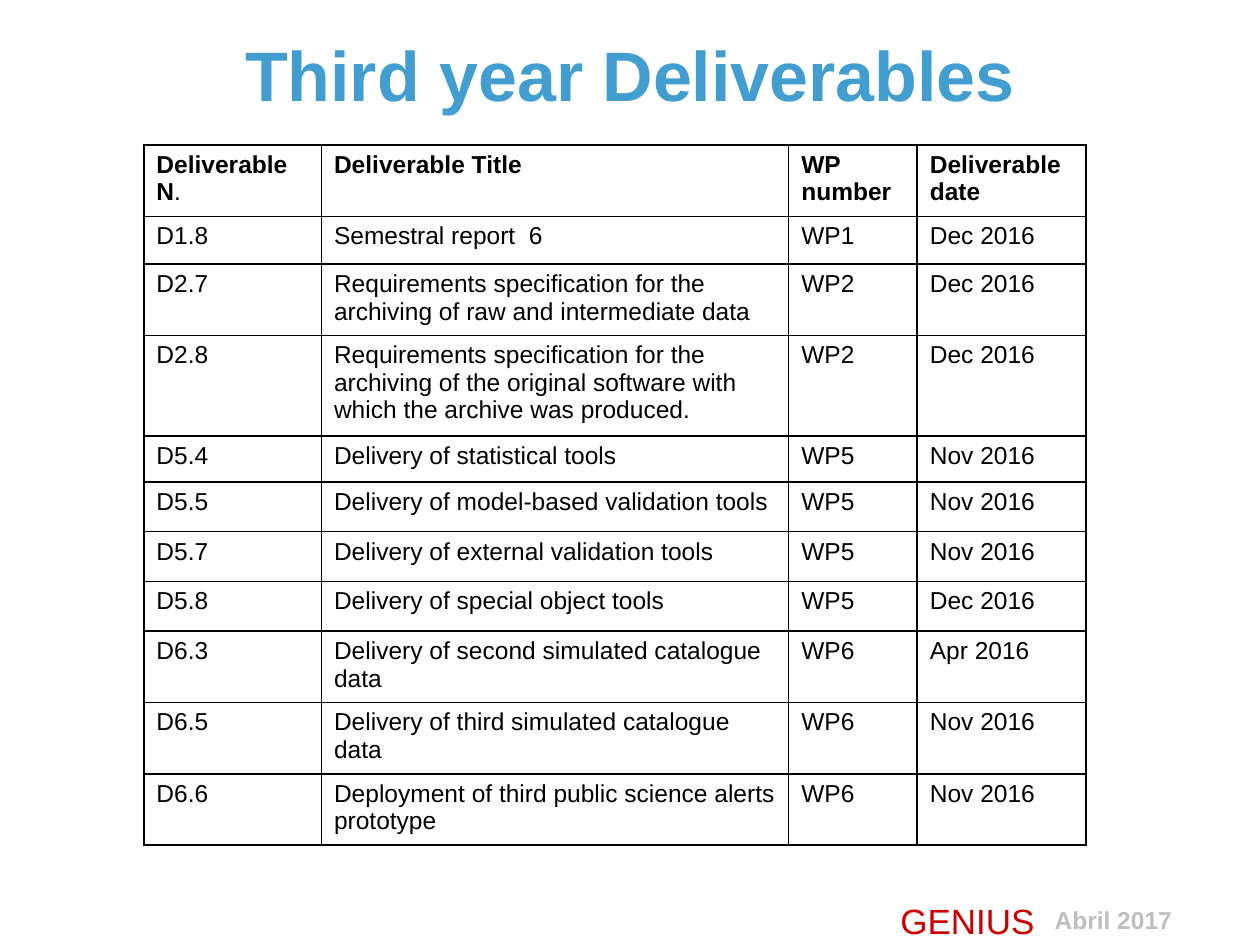
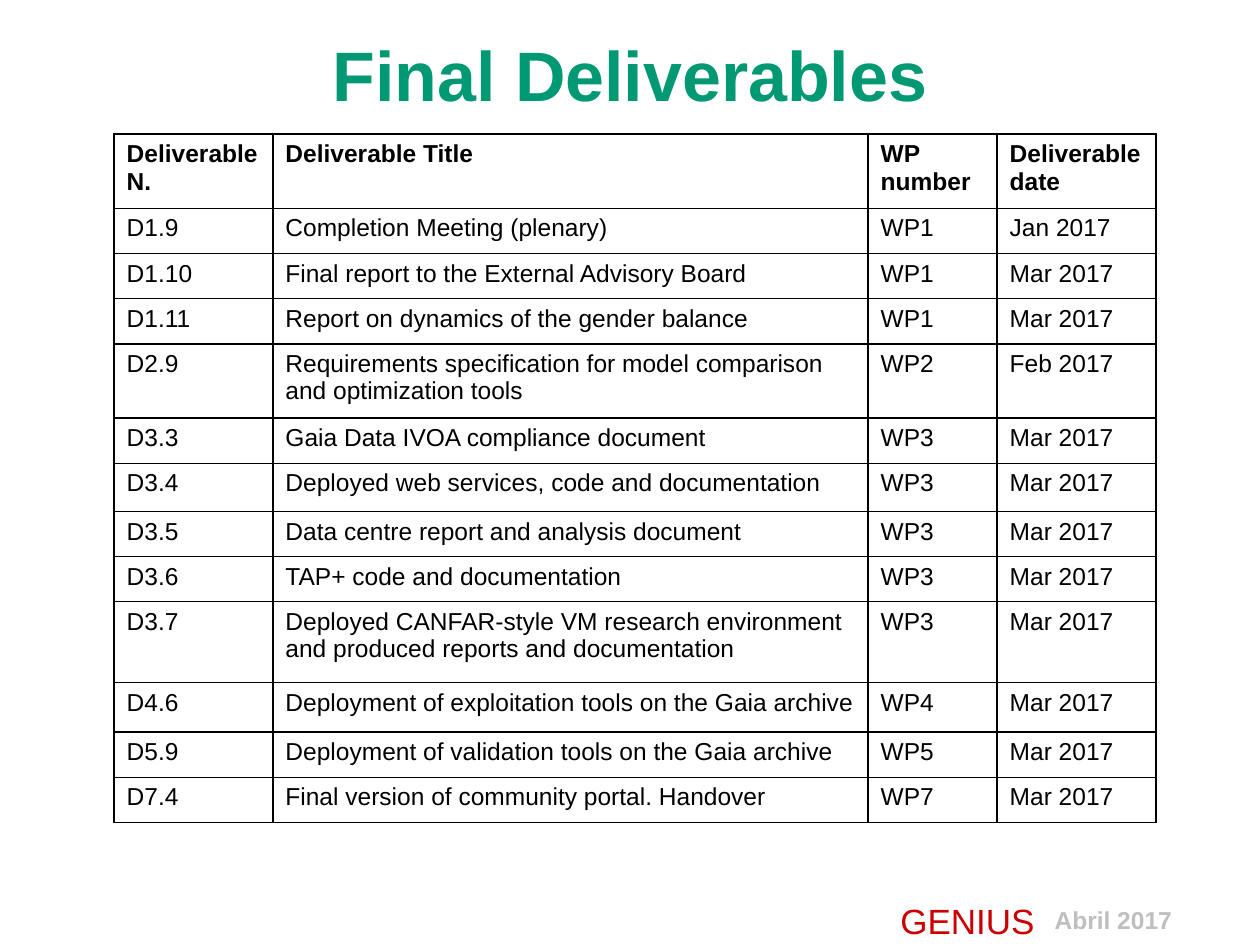
from lxml import etree
from pptx import Presentation, util as u
from pptx.dml.color import RGBColor
from pptx.enum import text
from pptx.oxml import ns

# Content: the last header piece of the first column is styled apart from the rest
COLUMNS = ["Deliverable N", "Deliverable Title", "WP number", "Deliverable date"]
SLIDES = [
    {
        "title": "Third year Deliverables", "color": "blue", "bold_stop": False,
        "left": 2.9, "top": 2.92, "widths": [3.58, 9.42, 2.59, 3.4],
        "header_height": 1.44,
        "rows": [
            ("D1.8", "Semestral report  6", "WP1", "Dec 2016", 0.96),
            ("D2.7", "Requirements specification for the archiving of raw and "
             "intermediate data", "WP2", "Dec 2016", 1.44),
            ("D2.8", "Requirements specification for the archiving of the original "
             "software with which the archive was produced.", "WP2", "Dec 2016", 2.03),
            ("D5.4", "Delivery of statistical tools", "WP5", "Nov 2016", 0.93),
            ("D5.5", "Delivery of model-based validation tools", "WP5", "Nov 2016", 1),
            ("D5.7", "Delivery of external validation tools", "WP5", "Nov 2016", 1),
            ("D5.8", "Delivery of special object tools", "WP5", "Dec 2016", 1),
            ("D6.3", "Delivery of second simulated catalogue data", "WP6", "Apr 2016", 1.44),
            ("D6.5", "Delivery of third simulated catalogue data", "WP6", "Nov 2016", 1.44),
            ("D6.6", "Deployment of third public science alerts prototype",
             "WP6", "Nov 2016", 1.44),
        ],
    },
    {
        "title": "Final Deliverables", "color": "green", "bold_stop": True,
        "left": 2.3, "top": 2.7, "widths": [3.2, 12, 2.6, 3.2],
        "header_height": 1.5,
        "rows": [
            ("D1.9", "Completion Meeting (plenary)", "WP1", "Jan 2017", 0.91),
            ("D1.10", "Final report to the External Advisory Board", "WP1", "Mar 2017", 0.91),
            ("D1.11", "Report on dynamics of the gender balance", "WP1", "Mar 2017", 0.91),
            ("D2.9", "Requirements specification for model comparison and "
             "optimization tools", "WP2", "Feb 2017", 1.5),
            ("D3.3", "Gaia Data IVOA compliance document", "WP3", "Mar 2017", 0.91),
            ("D3.4", "Deployed web services, code and documentation",
             "WP3", "Mar 2017", 0.97),
            ("D3.5", "Data centre report and analysis document", "WP3", "Mar 2017", 0.91),
            ("D3.6", "TAP+ code and documentation", "WP3", "Mar 2017", 0.91),
            ("D3.7", "Deployed CANFAR-style VM research environment and produced "
             "reports and documentation", "WP3", "Mar 2017", 1.63),
            ("D4.6", "Deployment of exploitation tools on the Gaia archive",
             "WP4", "Mar 2017", 1),
            ("D5.9", "Deployment of validation tools on the Gaia archive",
             "WP5", "Mar 2017", 0.91),
            ("D7.4", "Final version of community portal. Handover",
             "WP7", "Mar 2017", 0.91),
        ],
    },
]

# Shared look
COLORS = {"blue": "429ED0", "green": "009973", "red": "CC0000",
          "gray": "BFBFBF", "black": "000000"}
TITLE_BOX = (1.27, 0.33, 22.86, 2.29)
FOOTERS = [
    ("Abril 2017", (21.01, 18.11, 4.29, 0.86),
     {"size": u.Pt(14), "bold": True}, "gray", {}),
    ("GENIUS", (17.7, 18.11, 3.61, 1.02), {"size": u.Pt(20), "bold": False}, "red",
     {"alignment": text.PP_ALIGN.CENTER, "line_spacing": 0.9}),
]


def set_values(target, values):
    for name, value in values.items():
        setattr(target, name, value)


def add_span(para, words, color, **font_values):
    span = para.add_run()
    span.text = words
    set_values(span.font, {"name": "Arial", **font_values})
    span.font.color.rgb = RGBColor.from_string(COLORS[color])


def place(box, lengths):
    set_values(box, dict(zip(("left", "top", "width", "height"), map(u.Cm, lengths))))


def add_footers(page, layout):
    """Build the footers once and hand them to the shared layout."""
    for words, lengths, font_values, color, para_values in FOOTERS:
        box = page.shapes.add_textbox(*map(u.Cm, lengths))
        box.text_frame.word_wrap = True
        para = box.text_frame.paragraphs[0]
        set_values(para, para_values)
        add_span(para, words, color, **font_values)
        layout.shapes.element.append(box.element)


def add_title(page, words, color):
    title = page.shapes.title
    place(title, TITLE_BOX)
    set_values(title.text_frame, {"vertical_anchor": text.MSO_ANCHOR.MIDDLE,
                                  "auto_size": text.MSO_AUTO_SIZE.NONE})
    para = title.text_frame.paragraphs[0]
    para.alignment = text.PP_ALIGN.CENTER
    add_span(para, words, color, size=u.Pt(40), bold=True)


def format_cell(cell):
    cell.fill.background()
    properties = cell._tc.get_or_add_tcPr()
    for index, side in enumerate(("a:lnL", "a:lnR", "a:lnT", "a:lnB")):
        line = etree.Element(ns.qn(side), w=str(u.Pt(1)))
        fill = etree.SubElement(line, ns.qn("a:solidFill"))
        etree.SubElement(fill, ns.qn("a:srgbClr"), val=COLORS["black"])
        properties.insert(index, line)


def add_deliverables(page, content):
    heights = [content["header_height"]] + [row[-1] for row in content["rows"]]
    lines = [COLUMNS] + [row[:-1] for row in content["rows"]]
    widths = content["widths"]
    lengths = (content["left"], content["top"], sum(widths), sum(heights))
    table = page.shapes.add_table(len(lines), len(widths), *map(u.Cm, lengths)).table
    set_values(table, {"first_row": False, "horz_banding": False})
    for column, width in zip(table.columns, widths):
        column.width = u.Cm(width)
    for row, height, words in zip(table.rows, heights, lines):
        row.height = u.Cm(height)
        for cell, entry in zip(row.cells, words):
            format_cell(cell)
            add_span(cell.text_frame.paragraphs[0], entry, "black",
                     size=u.Pt(14), bold=words is COLUMNS)
    # Full stop after the number heading
    add_span(table.cell(0, 0).text_frame.paragraphs[0], ".", "black",
             size=u.Pt(14), bold=content["bold_stop"])


def main():
    deck = Presentation()
    set_values(deck, {"slide_width": u.Cm(25.4), "slide_height": u.Cm(19.05)})
    layout = deck.slide_layouts.get_by_name("Title Only")
    for content in SLIDES:
        page = deck.slides.add_slide(layout)
        add_title(page, content["title"], content["color"])
        add_deliverables(page, content)
    add_footers(page, layout)
    deck.save("out.pptx")


if __name__ == "__main__":
    main()
